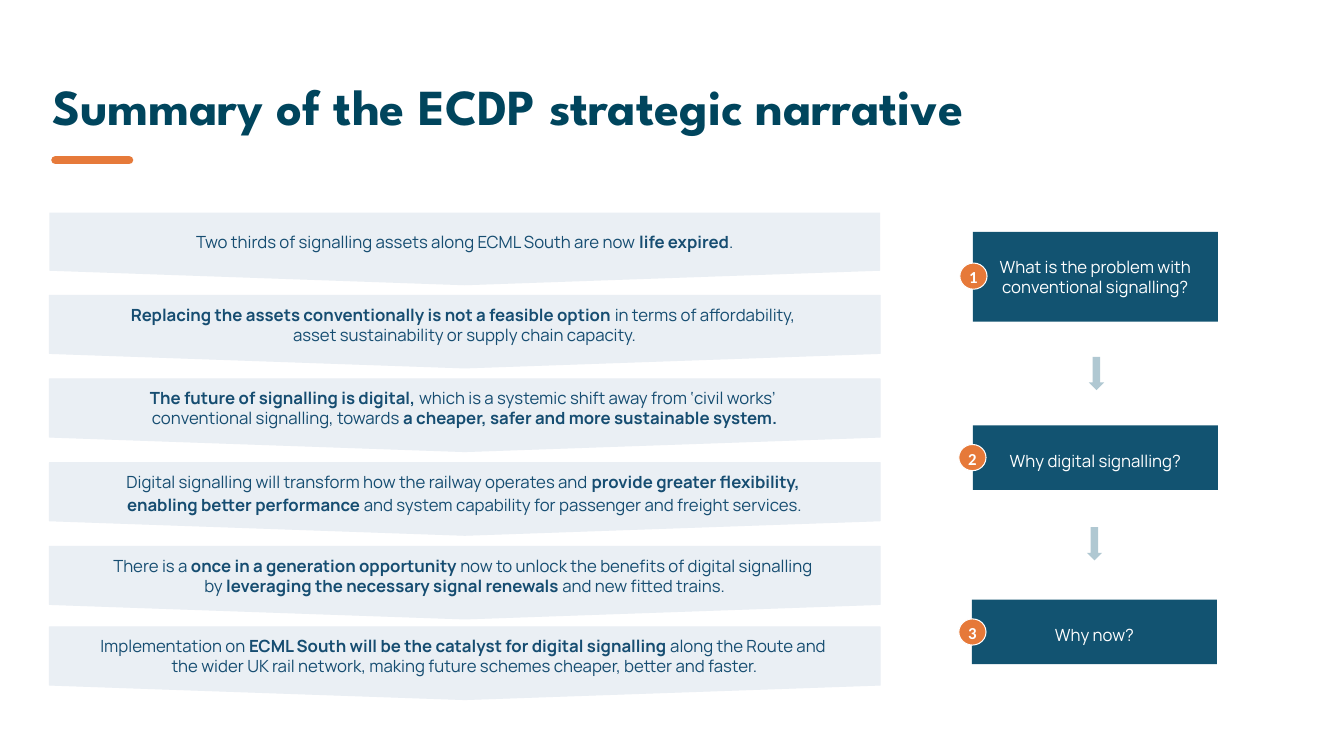
from copy import deepcopy

from pptx import Presentation
from pptx.dml.color import RGBColor
from pptx.enum import shapes, text
from pptx.oxml.ns import qn
from pptx.util import Inches, Pt

SHAPE = shapes.MSO_SHAPE
CENTER = text.PP_ALIGN.CENTER
TOP, MIDDLE = text.MSO_ANCHOR.TOP, text.MSO_ANCHOR.MIDDLE
PALE, TEAL, ORANGE, WHITE = "EAEFF4", "125371", "E67939", "FFFFFF"

prs = Presentation()
prs.slide_width, prs.slide_height = Inches(13.33), Inches(7.5)
slide = prs.slides.add_slide(prs.slide_layouts[6])


def add_block(kind, box, fill, line=None):
    block = slide.shapes.add_shape(kind, *map(Inches, box))
    block.shadow.inherit = False
    block.fill.solid()
    block.fill.fore_color.rgb = RGBColor.from_string(fill)
    if line:
        block.line.color.rgb = RGBColor.from_string(line)
        block.line.width = Pt(0.75)
    else:
        block.line.fill.background()
    return block


def write(block, wording, color, font="Manrope", size=12, align=CENTER,
          anchor=MIDDLE, insets=(0.1, 0.1, 0.1, 0.1), spacing=None):
    """Fill a shape with text; ** toggles bold and a newline breaks the line."""
    frame = block.text_frame
    frame.word_wrap = True
    frame.vertical_anchor = anchor
    for side, inset in zip(("left", "top", "right", "bottom"), insets):
        setattr(frame, f"margin_{side}", Inches(inset))
    paragraph = frame.paragraphs[0]
    paragraph.alignment = align
    paragraph.line_spacing = spacing
    for index, phrase in enumerate(wording.split("**")):
        for row, piece in enumerate(phrase.split("\n")):
            if row:
                paragraph.add_line_break()
            if piece:
                run = paragraph.add_run()
                run.text = piece
                run.font.name = font
                run.font.size = Pt(size)
                run.font.bold = index % 2 == 1
                run.font.color.rgb = RGBColor.from_string(color)
    # Line breaks take the text format, so that they keep the line height
    for line_break in paragraph._p.findall(qn("a:br")):
        line_break.append(deepcopy(paragraph.runs[0]._r.rPr))


title = slide.shapes.add_textbox(*map(Inches, (0.42, 0.75, 10.24, 0.66)))
write(title, "**Summary of the ECDP strategic narrative**", "00455D",
      font="League Spartan", size=36, align=text.PP_ALIGN.LEFT,
      insets=(0.1, 0.05, 0.1, 0.05), spacing=0.9)

underline = slide.shapes.add_connector(
    shapes.MSO_CONNECTOR.STRAIGHT, *map(Inches, (0.55, 1.59, 1.28, 1.59)))
underline.line.color.rgb = RGBColor.from_string("E67A3A")
underline.line.width = Pt(6)
properties = underline._element.spPr
properties.find(qn("a:ln")).set("cap", "rnd")
properties.append(properties.makeelement(qn("a:effectLst"), {}))

narrative = [
    (2.11, None, None,
     "Two thirds of signalling assets along ECML South are now **life expired**."),
    (2.93, PALE, None,
     "**Replacing the assets conventionally is not a feasible option **in terms of "
     "affordability, \nasset sustainability or supply chain capacity."),
    (3.76, PALE, None,
     "**The future of signalling is digital, **which is a systemic shift away from "
     "‘civil works’ \nconventional signalling, towards "
     "**a cheaper, safer and more sustainable system.**"),
    (4.59, PALE, 1.15,
     "Digital signalling will transform how the railway operates and "
     "**provide greater flexibility, \nenabling better performance **"
     "and system capability for passenger and freight services."),
    (5.42, PALE, None,
     "There is a **once in a generation opportunity **now to unlock the benefits of "
     "digital signalling \nby **leveraging the necessary signal renewals** "
     "and new fitted trains."),
    (6.22, PALE, None,
     "Implementation on **ECML South will be the catalyst for digital signalling **"
     "along the Route and \nthe wider UK rail network, making future schemes cheaper, "
     "better and faster."),
]
for top, outline, spacing, statement in narrative:
    band = add_block(SHAPE.FLOWCHART_OFFPAGE_CONNECTOR,
                     (0.49, top, 8.24, 0.72), PALE, outline)
    write(band, statement, "164D71", spacing=spacing)

questions = [
    ((9.65, 2.3, 2.43, 0.89), (9.52, 2.61),
     "What is the problem with conventional signalling?"),
    ((9.65, 4.22, 2.43, 0.64), (9.51, 4.41), "Why digital signalling?"),
    ((9.64, 5.95, 2.43, 0.64), (9.51, 6.14), "Why now?"),
]
for number, (box, badge_corner, question) in enumerate(questions, 1):
    write(add_block(SHAPE.RECTANGLE, box, TEAL), question, WHITE,
          anchor=TOP, insets=(0.1, 0.25, 0.1, 0.05))
    badge = add_block(SHAPE.OVAL, (*badge_corner, 0.27, 0.26), ORANGE, WHITE)
    write(badge, f"**{number}**", WHITE, font="Calibri",
          anchor=TOP, insets=(0, 0, 0, 0))

for left, top in ((10.8, 3.54), (10.78, 5.23)):
    add_block(SHAPE.DOWN_ARROW, (left, top, 0.15, 0.33), "B0C8D2")

prs.save("out.pptx")
